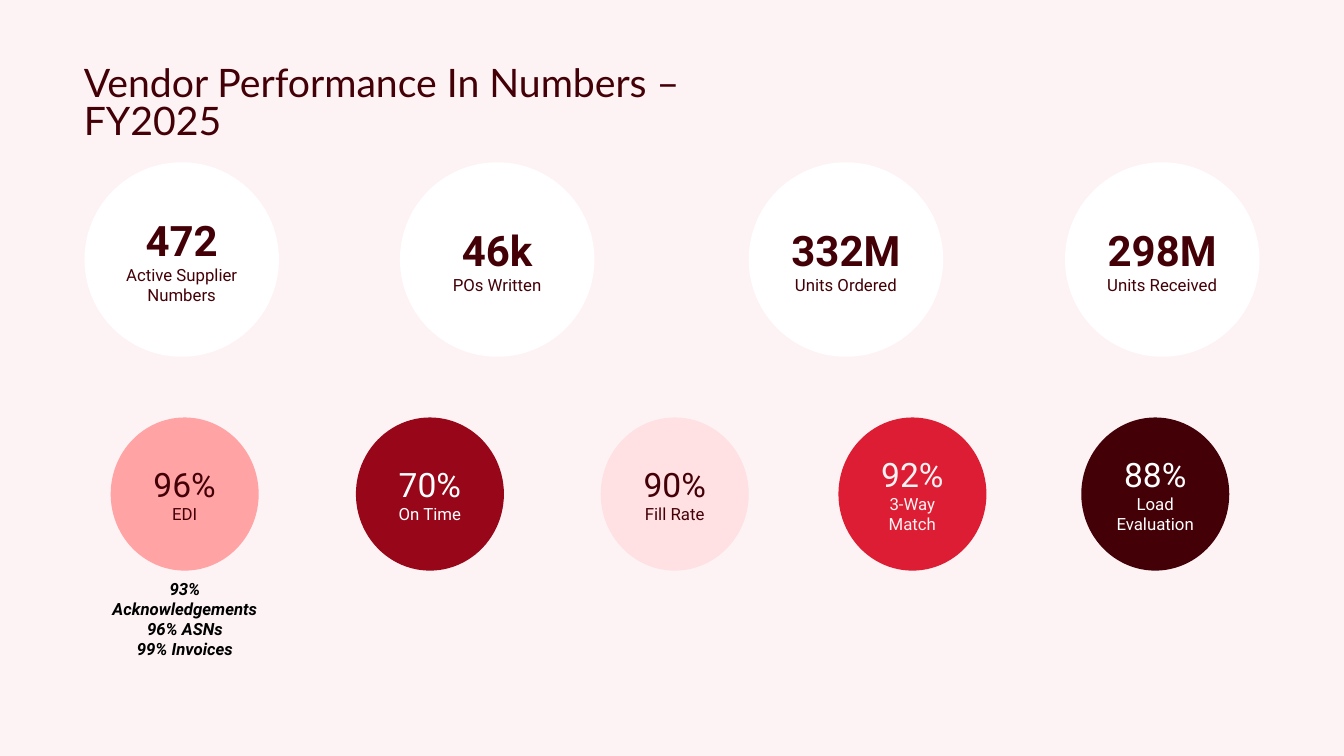
import pptx
import pptx.util
import pptx.dml.color
import pptx.enum.shapes
import pptx.enum.text

Cm = pptx.util.Cm
ALIGN = pptx.enum.text.PP_ALIGN
DARK, PALE, WHITE = "430007", "FDF3F4", "FFFFFF"

# Left edge (cm), figure, label
TOTALS = [
    (2.13, "472", "Active Supplier Numbers"),
    (10.08, "46k", "POs Written"),
    (18.87, "332M", "Units Ordered"),
    (26.84, "298M", "Units Received"),
]

# Left edge (cm), figure, label, fill, text colour
RATES = [
    (2.79, "96%", "EDI", "FFA3A5", DARK),
    (8.97, "70%", "On Time", "970619", WHITE),
    (15.14, "90%", "Fill Rate", "FFE0E3", DARK),
    (21.13, "92%", "3-Way Match", "DC1D34", PALE),
    (27.25, "88%", "Load Evaluation", DARK, WHITE),
]

DETAILS = ["93% Acknowledgements", "96% ASNs", "99% Invoices"]


def paint(fill, color):
    fill.solid()
    fill.fore_color.rgb = pptx.dml.color.RGBColor.from_string(color)


def write(frame, text, first=False, size=12, color=DARK, font="Roboto",
          bold=False, italic=False, align=ALIGN.CENTER, spacing=None):
    """Write one formatted paragraph into a text frame."""
    para = frame.paragraphs[0] if first else frame.add_paragraph()
    para.alignment = align
    if spacing:
        para.line_spacing = spacing
    run = para.add_run()
    run.text = text
    run.font.name = font
    run.font.size = pptx.util.Pt(size)
    run.font.bold = bold
    run.font.italic = italic
    paint(run.font.fill, color)


def center(frame):
    frame.word_wrap = True
    frame.vertical_anchor = pptx.enum.text.MSO_ANCHOR.MIDDLE
    return frame


def add_title(slide, text):
    title = slide.shapes.title
    title.left, title.top = Cm(1.86), Cm(1.52)
    title.width, title.height = Cm(18.03), Cm(2.26)
    write(center(title.text_frame), text, first=True, size=28, font="Lato",
          align=ALIGN.LEFT, spacing=0.8)


def add_circle(slide, box, figure, label, fill, color, size, bold=False):
    oval = slide.shapes.add_shape(
        pptx.enum.shapes.MSO_SHAPE.OVAL, *map(Cm, box))
    oval.shadow.inherit = False
    paint(oval.fill, fill)
    oval.line.fill.background()
    frame = center(oval.text_frame)
    write(frame, figure, first=True, size=size, color=color, bold=bold)
    write(frame, label, color=color)


def add_notes(slide, box, lines):
    frame = center(slide.shapes.add_textbox(*map(Cm, box)).text_frame)
    for i, line in enumerate(lines):
        write(frame, line, first=i == 0, color="000000", bold=True,
              italic=True)


def main():
    deck = pptx.Presentation()
    deck.slide_width, deck.slide_height = Cm(33.87), Cm(19.05)
    slide = deck.slides.add_slide(deck.slide_layouts[5])
    paint(slide.background.fill, PALE)
    add_title(slide, "Vendor Performance In Numbers – FY2025")

    # Yearly totals
    for left, figure, label in TOTALS:
        add_circle(slide, (left, 4.09, 4.9, 4.9), figure, label, WHITE, DARK,
                   size=30, bold=True)

    # Performance rates
    for left, figure, label, fill, color in RATES:
        add_circle(slide, (left, 10.52, 3.73, 3.86), figure, label, fill,
                   color, size=24)

    # EDI breakdown
    add_notes(slide, (2.21, 13.84, 4.9, 3.51), DETAILS)
    deck.save("out.pptx")


if __name__ == "__main__":
    main()
